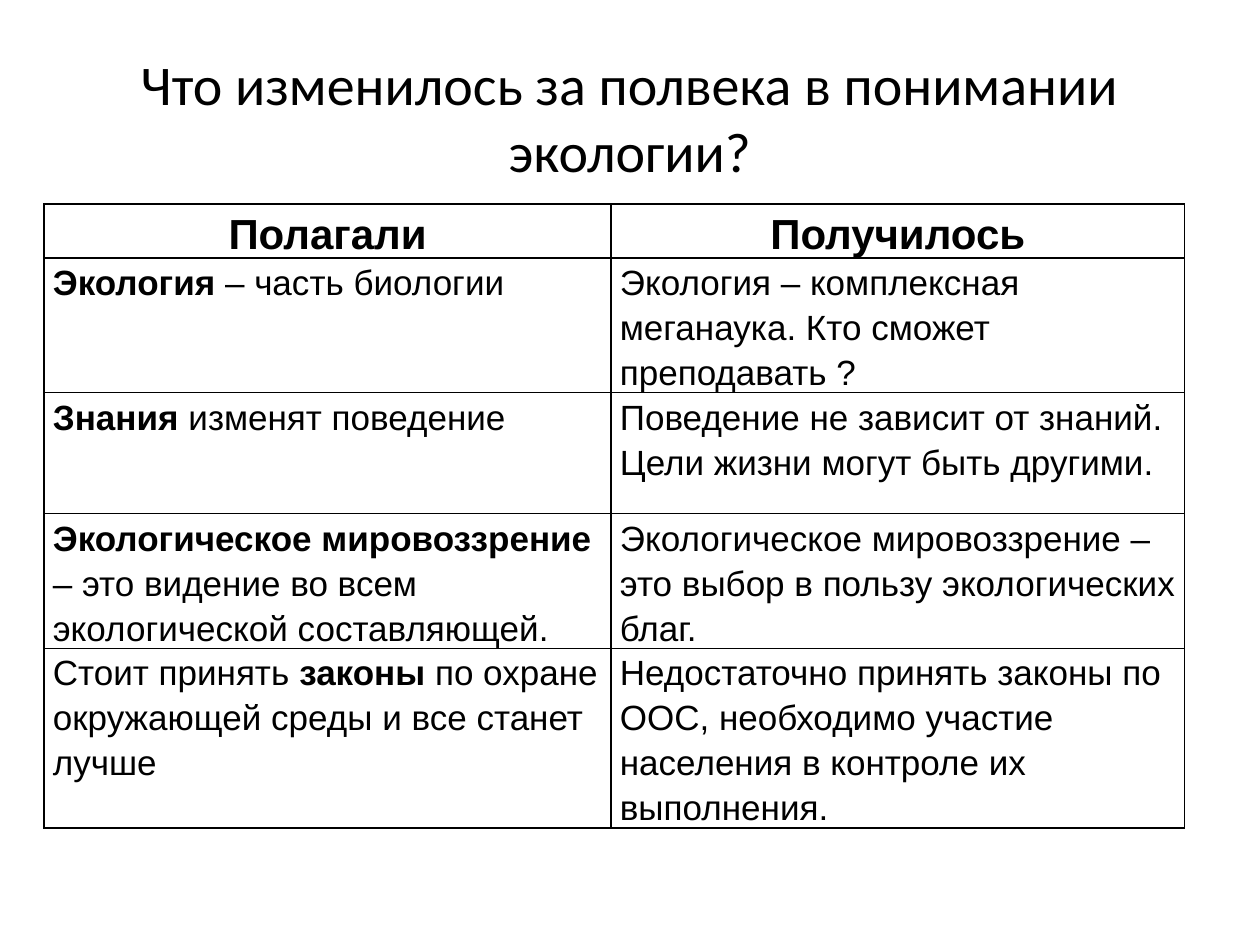
from lxml.etree import SubElement
from pptx import Presentation
from pptx.dml.color import RGBColor
from pptx.enum.text import MSO_ANCHOR, PP_ALIGN
from pptx.oxml.ns import qn
from pptx.util import Inches, Pt

BLACK = "000000"


def color(value):
    return RGBColor.from_string(value)


def add_span(para, text, name, size, bold=False):
    span = para.add_run()
    span.text = text
    for key, value in {"name": name, "size": Pt(size), "bold": bold}.items():
        setattr(span.font, key, value)
    span.font.color.rgb = color(BLACK)


deck = Presentation()
deck.slide_width, deck.slide_height = Inches(10), Inches(7.5)
page = deck.slides.add_slide(deck.slide_layouts[5])

# Title
title = page.shapes.title
place = {"left": 0.5, "top": 0.3, "width": 9, "height": 1.25}
for key, value in place.items():
    setattr(title, key, Inches(value))
title.text_frame.vertical_anchor = MSO_ANCHOR.MIDDLE
heading = title.text_frame.paragraphs[0]
heading.alignment = PP_ALIGN.CENTER
add_span(heading, "Что изменилось за полвека в понимании экологии?", "Calibri", 32)

# Table content: each cell is a list of (text, bold) spans
rows = [
    [[("Полагали", True)], [("Получилось", True)]],
    [[("Экология", True), (" – часть биологии", False)],
     [("Экология – комплексная меганаука. Кто сможет преподавать ?", False)]],
    [[("Знания", True), (" изменят поведение", False)],
     [("Поведение не зависит от знаний. Цели жизни могут быть другими.", False)]],
    [[("Экологическое мировоззрение ", True),
      ("– это видение во всем экологической составляющей.", False)],
     [("Экологическое мировоззрение – это выбор в пользу экологических благ.", False)]],
    [[("Стоит принять ", False), ("законы", True),
      (" по охране окружающей среды и все станет лучше", False)],
     [("Недостаточно принять законы по ООС, необходимо участие населения "
       "в контроле их выполнения.", False)]],
]
widths = [4.5, 4.55]
heights = [0.41, 0.96, 0.96, 0.96, 1.28]

# Table grid
table = page.shapes.add_table(
    len(rows), len(widths), Inches(0.35), Inches(1.62),
    Inches(sum(widths)), Inches(sum(heights))).table
table.first_row = table.horz_banding = False
for column, width in zip(table.columns, widths):
    column.width = Inches(width)
for row, height in zip(table.rows, heights):
    row.height = Inches(height)

cell_format = {"margin_left": Inches(0.07), "margin_right": Inches(0.07),
               "margin_top": 0, "margin_bottom": 0,
               "vertical_anchor": MSO_ANCHOR.TOP}
header_format = {"alignment": PP_ALIGN.CENTER, "line_spacing": 1.15,
                 "space_after": Pt(10)}
body_format = {"alignment": PP_ALIGN.LEFT, "line_spacing": 1.15}

# Cells
for row_index, row in enumerate(rows):
    is_header = row_index == 0
    for column_index, spans in enumerate(row):
        cell = table.cell(row_index, column_index)
        for key, value in cell_format.items():
            setattr(cell, key, value)

        # Black borders come before the fill in the cell properties
        properties = cell._tc.get_or_add_tcPr()
        for side in ("a:lnL", "a:lnR", "a:lnT", "a:lnB"):
            line = SubElement(properties, qn(side), w=str(Pt(1)))
            fill = SubElement(line, qn("a:solidFill"))
            SubElement(fill, qn("a:srgbClr"), val=BLACK)
        cell.fill.background()

        para = cell.text_frame.paragraphs[0]
        for key, value in (header_format if is_header else body_format).items():
            setattr(para, key, value)
        for text, bold in spans:
            add_span(para, text, "Arial", 24 if is_header else 20, bold)

deck.save("out.pptx")
